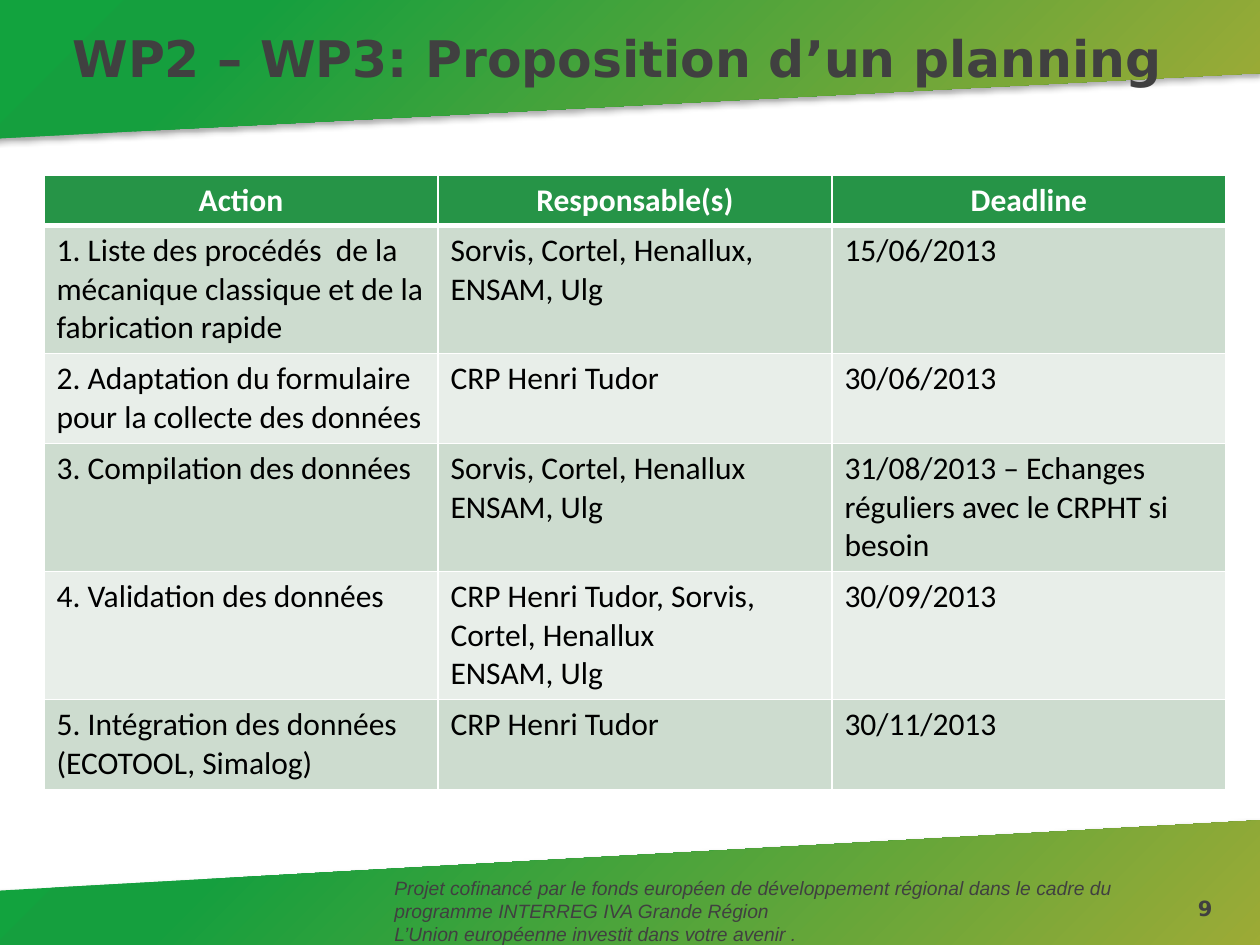
from pptx import Presentation
from pptx.dml.color import RGBColor as RGB
from pptx.enum.text import MSO_ANCHOR as Anchor, MSO_AUTO_SIZE as Fit, PP_ALIGN as Align
from pptx.oxml import parse_xml
from pptx.oxml.ns import nsdecls
from pptx.util import Pt

PX = 914400 // 126
COLORS = {
    "olive": "A1AB36", "leaf": "159F3E", "green": "12A33E",
    "head": "269447", "odd": "CDDCCF", "even": "E8EEE9",
    "text": "404040", "black": "000000", "white": "FFFFFF",
}
NS = nsdecls("a")

TOP = [(-9, -4), (-13, 139), (1261, 73), (1261, -5)]
BOTTOM = [(1263, 976), (1265, 820), (-25, 892), (-25, 979)]
FOOTER = [
    "Projet cofinancé par le fonds européen de développement régional dans le cadre du "
    "programme INTERREG IVA Grande Région",
    "L’Union européenne investit dans votre avenir .",
]
# Each cell is one string; a line break starts a new paragraph.
PLAN = [
    ("Action", "Responsable(s)", "Deadline"),
    ("1. Liste des procédés  de la mécanique classique et de la fabrication rapide",
     "Sorvis, Cortel, Henallux, ENSAM, Ulg", "15/06/2013"),
    ("2. Adaptation du formulaire pour la collecte des données",
     "CRP Henri Tudor", "30/06/2013"),
    ("3. Compilation des données", "Sorvis, Cortel, Henallux\nENSAM, Ulg",
     "31/08/2013 – Echanges réguliers avec le CRPHT si besoin"),
    ("4. Validation des données",
     "CRP Henri Tudor, Sorvis, Cortel, Henallux\nENSAM, Ulg", "30/09/2013"),
    ("5. Intégration des données (ECOTOOL, Simalog)", "CRP Henri Tudor", "30/11/2013"),
]
HEIGHTS = [50, 128, 90, 128, 128, 90]


class Deck:
    """Holds the style and the current slide."""

    def __init__(self, wide, high):
        self.prs = Presentation()
        self.prs.slide_width, self.prs.slide_height = wide * PX, high * PX
        self.slide = self.prs.slides.add_slide(self.prs.slide_layouts[5])
        self.shapes = self.slide.shapes

    def put(self, frame, lines, font, size, color, bold=False, italic=False,
            align=Align.LEFT):
        """Fill a text frame, one paragraph a line."""
        for i, line in enumerate(lines):
            para = frame.add_paragraph() if i else frame.paragraphs[0]
            para.alignment = align
            run = para.add_run()
            run.text = line
            run.font.name, run.font.size = font, Pt(size)
            run.font.bold, run.font.italic = bold, italic
            run.font.color.rgb = RGB.from_string(COLORS[color])

    def band(self, points):
        """Draw a slanted band with a radial gradient and a soft shadow."""
        pen = self.shapes.build_freeform(*points[0], scale=PX)
        pen.add_line_segments(points[1:], close=True)
        shape = pen.convert_to_shape()
        stops = "".join(
            f'<a:gs pos="{pos}000"><a:srgbClr val="{COLORS[name]}"/></a:gs>'
            for pos, name in ((0, "olive"), (80, "leaf"), (100, "green")))
        props = shape.element.spPr
        props.append(parse_xml(
            f'<a:gradFill {NS} rotWithShape="1"><a:gsLst>{stops}</a:gsLst>'
            '<a:path path="circle"><a:fillToRect l="100000" t="100000"/></a:path>'
            '</a:gradFill>'))
        shape.line.fill.background()
        props.append(parse_xml(
            f'<a:effectLst {NS}><a:outerShdw blurRad="{Pt(3.1)}" dist="{Pt(1.8)}" '
            f'dir="5400000" rotWithShape="0"><a:srgbClr val="{COLORS["black"]}">'
            '<a:alpha val="35000"/></a:srgbClr></a:outerShdw></a:effectLst>'))

    def title(self, text, x, y, w, h):
        shape = self.shapes.title
        shape.left, shape.top, shape.width, shape.height = (v * PX for v in (x, y, w, h))
        frame = shape.text_frame
        frame.auto_size, frame.vertical_anchor = Fit.NONE, Anchor.MIDDLE
        self.put(frame, [text], "DejaVu Sans", 28.8, "text", bold=True, align=Align.CENTER)
        # The title lies over the bands drawn before it.
        self.shapes.element.append(shape.element)

    def label(self, lines, x, y, w, h, **style):
        box = self.shapes.add_textbox(*(v * PX for v in (x, y, w, h)))
        frame = box.text_frame
        frame.word_wrap, frame.vertical_anchor = True, Anchor.MIDDLE
        self.put(frame, lines, color="text", **style)

    def edge(self, cell, bottom):
        """Give a cell white borders."""
        props = cell._tc.get_or_add_tcPr()
        for side, width in (("L", 1), ("R", 1), ("T", 1), ("B", bottom)):
            props.append(parse_xml(
                f'<a:ln{side} {NS} w="{Pt(width)}"><a:solidFill>'
                f'<a:srgbClr val="{COLORS["white"]}"/></a:solidFill></a:ln{side}>'))

    def table(self, rows, heights, x, y, col):
        count = len(rows[0])
        grid = self.shapes.add_table(
            len(rows), count, x * PX, y * PX, col * count * PX, sum(heights) * PX).table
        grid.horz_banding = False
        for column in grid.columns:
            column.width = col * PX
        for r, (row, high) in enumerate(zip(rows, heights)):
            grid.rows[r].height = high * PX
            head = r == 0
            fill = "head" if head else "odd" if r % 2 else "even"
            for c, text in enumerate(row):
                cell = grid.cell(r, c)
                self.edge(cell, 3 if head else 1)
                cell.fill.solid()
                cell.fill.fore_color.rgb = RGB.from_string(COLORS[fill])
                self.put(cell.text_frame, text.split("\n"), "Calibri", 18,
                         "white" if head else "black", bold=head,
                         align=Align.CENTER if head else Align.LEFT)


def main():
    deck = Deck(1260, 945)
    deck.band(BOTTOM)
    deck.band(TOP)
    deck.label(FOOTER, 382, 869, 764, 83, font="Arial", size=11, italic=True)
    deck.title("WP2 – WP3: Proposition d’un planning", 0, -1, 1235, 117)
    deck.label(["9"], 931, 883, 294, 50, font="DejaVu Sans", size=12, bold=True,
               align=Align.RIGHT)
    deck.table(PLAN, HEIGHTS, 44, 175, 394)
    deck.prs.save("out.pptx")


if __name__ == "__main__":
    main()
